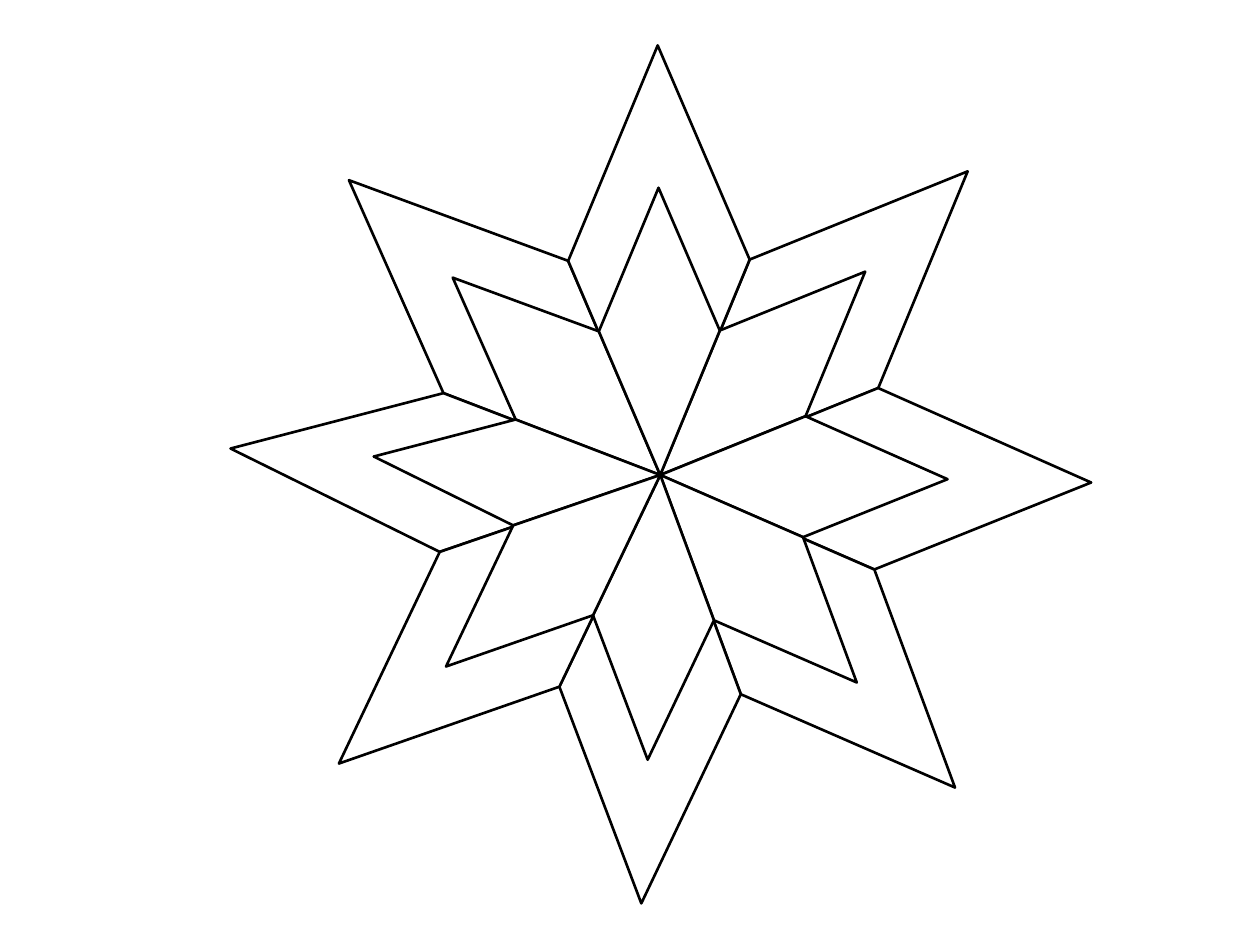
from math import cos, radians, sin

from pptx import Presentation
from pptx.dml.color import RGBColor
from pptx.util import Pt

PX = 9144  # EMU per px, 100 px to the inch
BLANK_LAYOUT = 6
WHITE = RGBColor(0xFF, 0xFF, 0xFF)
BLACK = RGBColor(0x00, 0x00, 0x00)

# Tips and the valleys between them, clockwise from the north-west;
# each valley lies just before the tip with the same index.
TIPS = [(277, 143), (522, 36), (768, 136), (866, 383),
        (758, 625), (509, 717), (269, 606), (183, 356)]
VALLEYS = [(352, 312), (451, 207), (595, 206), (697, 308),
           (694, 452), (588, 551), (444, 545), (349, 438)]
STAR_CENTER = (524, 378)
STACKING = [0, 7, 2, 3, 4, 5, 6, 1]  # petal indices, back to front

# Scale, center and turn of each ring of petals
RINGS = [(1, STAR_CENTER, 313.6), (2 / 3, (524, 377), 313.5)]


def turn(point, degrees):
    """Rotate a point clockwise about the slide's top left corner."""
    x, y = point
    angle = radians(degrees)
    return x * cos(angle) - y * sin(angle), x * sin(angle) + y * cos(angle)


def resize(point, scale, center):
    """Scale a star point and place it around the ring's center."""
    return tuple(middle + (value - origin) * scale
                 for value, origin, middle in zip(point, STAR_CENTER, center))


def add_petal(page, points, rotation):
    """Draw an outline whose given points are where it lies once rotated."""
    upright = [turn(point, -rotation) for point in points]
    middle = [(min(values) + max(values)) / 2 for values in zip(*upright)]
    center = turn(middle, rotation)
    corners = [(round((x - middle[0] + center[0]) * PX),
                round((y - middle[1] + center[1]) * PX)) for x, y in upright]

    builder = page.shapes.build_freeform(*corners[0])
    builder.add_line_segments(corners[1:], close=True)
    petal = builder.convert_to_shape()
    petal.rotation = rotation
    petal.shadow.inherit = False
    petal.fill.solid()
    petal.fill.fore_color.rgb = WHITE
    petal.line.color.rgb = BLACK
    petal.line.width = Pt(1.5)
    return petal


def add_ring(page, scale, center, rotation):
    petals = []
    for index in STACKING:
        corners = [VALLEYS[index], TIPS[index],
                   VALLEYS[(index + 1) % len(VALLEYS)], STAR_CENTER]
        points = [resize(corner, scale, center) for corner in corners]
        petals.append(add_petal(page, points, rotation))
    return petals


def main():
    deck = Presentation()
    deck.slide_width, deck.slide_height = 1000 * PX, 750 * PX
    page = deck.slides.add_slide(deck.slide_layouts[BLANK_LAYOUT])

    # Outer ring, then the inner ring on top, held together as one star
    petals = [petal for ring in RINGS for petal in add_ring(page, *ring)]
    page.shapes.add_group_shape(petals)

    deck.save("out.pptx")


if __name__ == "__main__":
    main()
